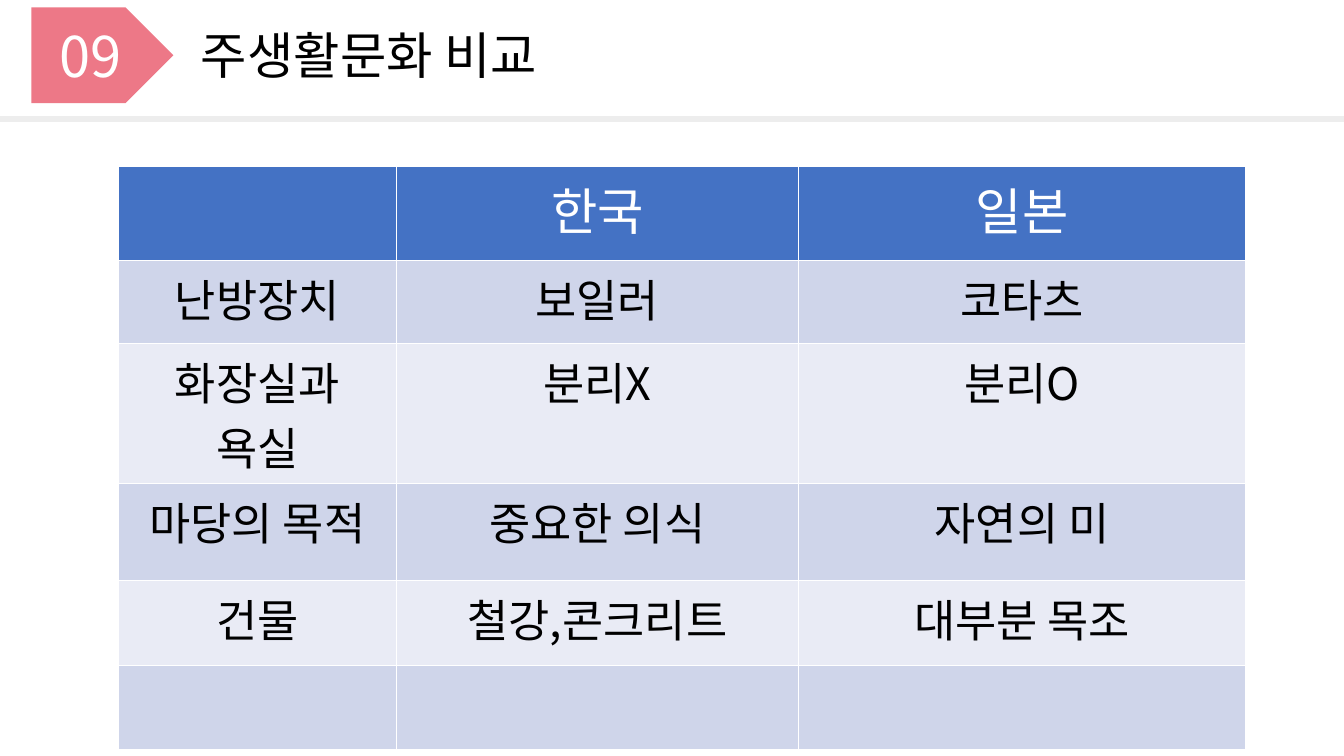
from dataclasses import dataclass

from lxml.etree import SubElement
from pptx import Presentation
from pptx.dml.color import RGBColor
from pptx.enum.shapes import MSO_CONNECTOR as Connector, MSO_SHAPE as Preset
from pptx.enum.text import MSO_ANCHOR as Anchor, MSO_AUTO_SIZE as AutoSize, PP_ALIGN as Align
from pptx.oxml.ns import qn
from pptx.slide import Slide
from pptx.table import _Cell as Cell
from pptx.text.text import TextFrame
from pptx.util import Cm, Pt


@dataclass(frozen=True)
class Theme:
    font: str = "Noto Sans CJK KR"
    white: str = "FFFFFF"
    black: str = "000000"
    badge: str = "ED7887"
    rule: str = "EDEDED"
    header: str = "4472C4"
    bands: tuple[str, str] = ("CFD5EA", "E9EBF5")
    number_size: int = 40
    title_size: int = 36
    body_size: int = 32
    rule_width: float = 4.5
    border_width: float = 1


@dataclass(frozen=True)
class Area:
    left: float
    top: float
    width: float
    height: float

    def lengths(self) -> tuple[Cm, Cm, Cm, Cm]:
        return Cm(self.left), Cm(self.top), Cm(self.width), Cm(self.height)


@dataclass(frozen=True)
class Row:
    height: float
    texts: tuple[str, str, str]


THEME = Theme()
SLIDE_WIDTH, SLIDE_HEIGHT = 33.87, 19.05
BADGE = Area(0.79, 0.19, 3.58, 2.41)
TITLE = Area(4.81, 0.48, 26.04, 1.8)
RULE_TOP = 3
TABLE_LEFT, TABLE_TOP = 2.98, 4.2
COLUMN_WIDTHS = (7.01, 10.13, 11.28)
CELL_MARGIN = 0.4
ROWS = (
    Row(2.37, ("", "한국", "일본")),
    Row(2.08, ("난방장치", "보일러", "코타츠")),
    Row(3.54, ("화장실과 욕실", "분리X", "분리O")),
    Row(2.44, ("마당의 목적", "중요한 의식", "자연의 미")),
    Row(2.13, ("건물", "철강,콘크리트", "대부분 목조")),
    Row(2.13, ("", "", "")),
)


def write(frame: TextFrame, text: str, *, size: float, color: str,
          align: Align = Align.CENTER) -> None:
    para = frame.paragraphs[0]
    para.alignment = align
    span = para.add_run()
    span.text = text
    span.font.size = Pt(size)
    span.font.bold = False
    span.font.name = THEME.font
    span.font.color.rgb = RGBColor.from_string(color)
    SubElement(span.font._element, qn("a:ea"), typeface=THEME.font)


def add_badge(page: Slide) -> None:
    badge = page.shapes.add_shape(Preset.PENTAGON, *BADGE.lengths())
    badge.shadow.inherit = False
    badge.fill.solid()
    badge.fill.fore_color.rgb = RGBColor.from_string(THEME.badge)
    badge.line.fill.background()
    badge.text_frame.vertical_anchor = Anchor.MIDDLE
    write(badge.text_frame, "09", size=THEME.number_size, color=THEME.white)


def add_title(page: Slide) -> None:
    title = page.shapes.title
    title.left, title.top, title.width, title.height = TITLE.lengths()
    frame = title.text_frame
    frame.auto_size = AutoSize.NONE
    frame.word_wrap = True
    frame.vertical_anchor = Anchor.MIDDLE
    write(frame, "주생활문화 비교", size=THEME.title_size, color=THEME.black, align=Align.LEFT)


def add_rule(page: Slide) -> None:
    rule = page.shapes.add_connector(
        Connector.STRAIGHT, Cm(0), Cm(RULE_TOP), Cm(SLIDE_WIDTH), Cm(RULE_TOP))
    rule.line.color.rgb = RGBColor.from_string(THEME.rule)
    rule.line.width = Pt(THEME.rule_width)
    SubElement(rule._element.spPr, qn("a:effectLst"))


def format_cell(cell: Cell, fill: str) -> None:
    properties = cell._tc.get_or_add_tcPr()
    for side in "LRTB":
        border = SubElement(properties, qn(f"a:ln{side}"), w=str(Pt(THEME.border_width)))
        paint = SubElement(border, qn("a:solidFill"))
        SubElement(paint, qn("a:srgbClr"), val=THEME.white)
    cell.fill.solid()
    cell.fill.fore_color.rgb = RGBColor.from_string(fill)
    cell.margin_left = cell.margin_right = Cm(CELL_MARGIN)


def add_comparison(page: Slide) -> None:
    area = Area(TABLE_LEFT, TABLE_TOP, sum(COLUMN_WIDTHS), sum(row.height for row in ROWS))
    table = page.shapes.add_table(len(ROWS), len(COLUMN_WIDTHS), *area.lengths()).table
    for column, width in zip(table.columns, COLUMN_WIDTHS):
        column.width = Cm(width)
    for index, row in enumerate(ROWS):
        table.rows[index].height = Cm(row.height)
        is_header = index == 0
        fill = THEME.header if is_header else THEME.bands[(index - 1) % 2]
        size = THEME.title_size if is_header else THEME.body_size
        color = THEME.white if is_header else THEME.black
        for cell, text in zip(table.rows[index].cells, row.texts):
            format_cell(cell, fill)
            if text:
                write(cell.text_frame, text, size=size, color=color)


def main() -> None:
    deck = Presentation()
    deck.slide_width, deck.slide_height = Cm(SLIDE_WIDTH), Cm(SLIDE_HEIGHT)
    page = deck.slides.add_slide(deck.slide_layouts.get_by_name("Title Only"))
    add_comparison(page)
    add_badge(page)
    add_title(page)
    add_rule(page)
    deck.save("out.pptx")


if __name__ == "__main__":
    main()
